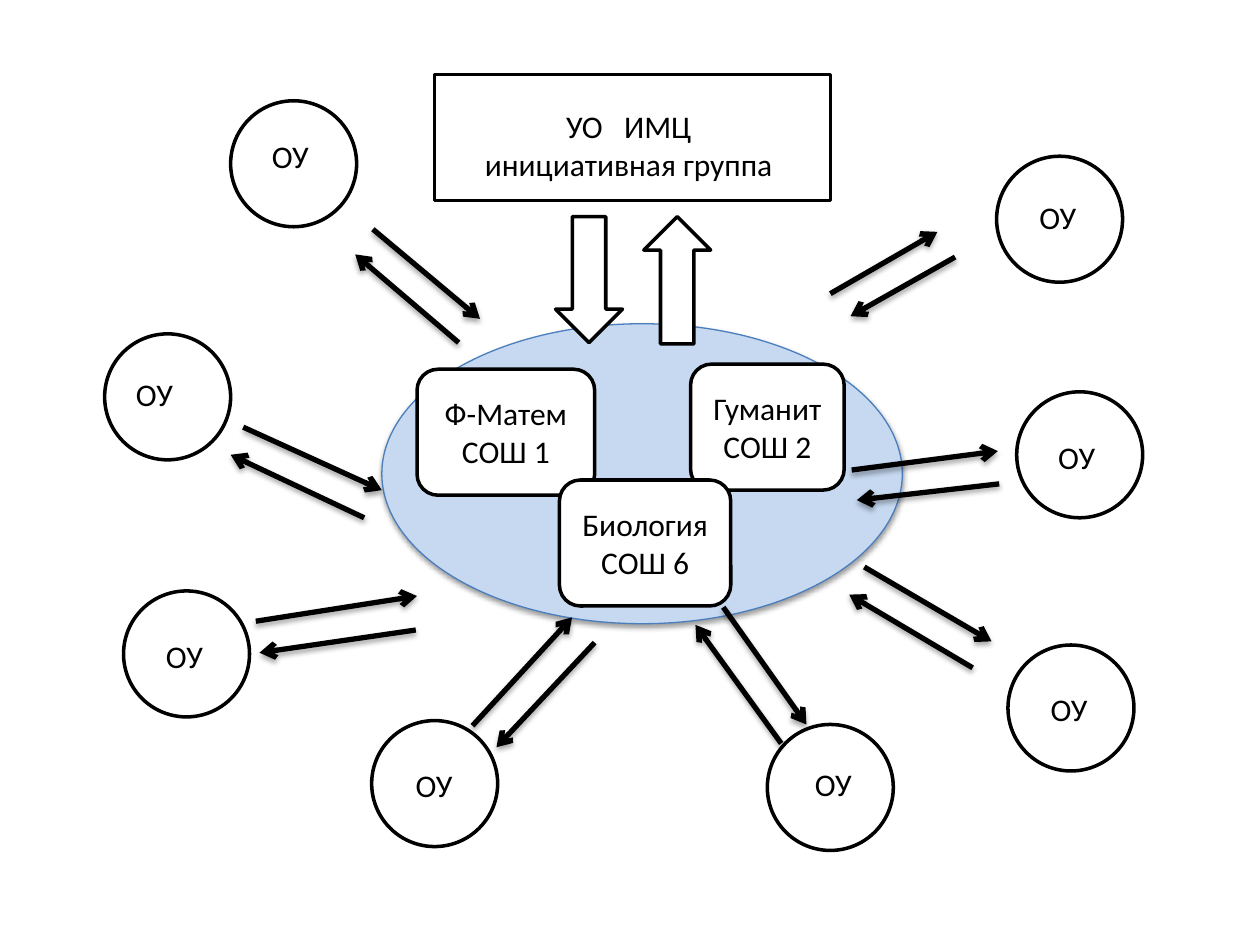
from dataclasses import dataclass

from lxml import etree
from pptx import Presentation
from pptx.dml.color import RGBColor
from pptx.enum.shapes import MSO_CONNECTOR, MSO_SHAPE
from pptx.enum.text import MSO_ANCHOR, MSO_AUTO_SIZE, PP_ALIGN
from pptx.oxml.ns import qn
from pptx.util import Pt

OVAL, RECT, ROUND = MSO_SHAPE.OVAL, MSO_SHAPE.RECTANGLE, MSO_SHAPE.ROUNDED_RECTANGLE
DOWN, UP = MSO_SHAPE.DOWN_ARROW, MSO_SHAPE.UP_ARROW
STRAIGHT = MSO_CONNECTOR.STRAIGHT
LEFT, CENTER = PP_ALIGN.LEFT, PP_ALIGN.CENTER
TOP, MIDDLE = MSO_ANCHOR.TOP, MSO_ANCHOR.MIDDLE
FIT_SHAPE = MSO_AUTO_SIZE.SHAPE_TO_FIT_TEXT
BLACK, WHITE, PALE_BLUE, BLUE = "000000", "FFFFFF", "C6D9F1", "4B7EBC"
FONT = "Calibri"
SIDE = 72


@dataclass
class School:
    x: float
    y: float
    label_x: float
    label_y: float
    label_w: float = 38.2


@dataclass
class Box:
    kind: int
    x: float
    y: float
    w: float
    h: float = SIDE
    text: str = ""


@dataclass
class Arrow:
    x1: float
    y1: float
    x2: float
    y2: float


SCHOOLS = [
    School(131.8, 57.6, 148.3, 74.9),
    School(576, 368.6, 593.3, 391),
    School(569.5, 89.3, 586.8, 109.4),
    School(438.5, 414, 458.6, 433.4),
    School(59.8, 190.8, 70.6, 211, 60.5),
    School(70.6, 337.7, 87.8, 360.7),
    School(212.4, 411.8, 230.4, 434.2),
    School(581, 223.9, 597.6, 247),
]
BOXES = [
    Box(RECT, 248.4, 42.5, 226.1),
    Box(ROUND, 238.3, 211, 101.5, text="Ф-Матем\nСОШ 1"),
    Box(ROUND, 394.6, 208.1, 87.8, text="Гуманит\nСОШ 2"),
    Box(ROUND, 319.7, 274.3, 97.9, text="Биология\nСОШ 6"),
    Box(DOWN, 317.5, 123.8, 38.2),
    Box(UP, 367.9, 123.8, 38.2, 72.7),
]
EXCHANGES = [
    (Arrow(139, 244.1, 218.2, 280.1), Arrow(208.1, 295.9, 131.8, 259.9)),
    (Arrow(213.1, 131, 274.3, 182.2), Arrow(262.1, 195.8, 203, 145.4)),
    (Arrow(474.5, 167.8, 535.7, 132.5), Arrow(545.8, 146.9, 486, 180.7)),
    (Arrow(486.7, 268.6, 570.2, 257.8), Arrow(571, 276.5, 489.6, 285.8)),
    (Arrow(146.2, 355, 238.3, 340.6), Arrow(237.6, 360, 148.3, 373)),
    (Arrow(493.9, 324, 566.6, 366.5), Arrow(555.8, 381.6, 485.3, 339.8)),
    (Arrow(270, 414.7, 326.9, 352.8), Arrow(339.8, 367.2, 283.7, 427)),
    (Arrow(446.4, 424.8, 397.4, 357.1), Arrow(413.3, 347, 460.8, 414)),
]


def color(value: str) -> RGBColor:
    return RGBColor.from_string(value)


def write(shape, text: str, *, align=CENTER, anchor=MIDDLE, size=18) -> None:
    tf = shape.text_frame
    tf.word_wrap = True
    tf.vertical_anchor = anchor
    for i, line in enumerate(text.split("\n")):
        p = tf.add_paragraph() if i else tf.paragraphs[0]
        p.alignment = align
        r = p.add_run()
        r.text = line
        r.font.name, r.font.size = FONT, Pt(size)
        r.font.color.rgb = color(BLACK)


def add_shadow(shape, alpha: int, dist: float) -> None:
    pr = shape._element.spPr
    effects = pr.find(qn("a:effectLst"))
    if effects is None:
        effects = etree.SubElement(pr, qn("a:effectLst"))
    shadow = etree.SubElement(effects, qn("a:outerShdw"), blurRad=str(Pt(3.1)),
                              dist=str(Pt(dist)), dir="5400000", rotWithShape="0")
    clr = etree.SubElement(shadow, qn("a:srgbClr"), val=BLACK)
    etree.SubElement(clr, qn("a:alpha"), val=str(alpha * 1000))


def add_box(s, box: Box, *, fill=WHITE, line=BLACK, width=2.0):
    sp = s.shapes.add_shape(box.kind, Pt(box.x), Pt(box.y), Pt(box.w), Pt(box.h))
    sp.shadow.inherit = False
    sp.fill.solid()
    sp.fill.fore_color.rgb = color(fill)
    sp.line.color.rgb = color(line)
    sp.line.width = Pt(width)
    if box.text:
        write(sp, box.text)
    return sp


def add_label(s, text: str, x: float, y: float, w: float, h: float, *, align=LEFT) -> None:
    sp = s.shapes.add_textbox(Pt(x), Pt(y), Pt(w), Pt(h))
    write(sp, text, align=align, anchor=TOP)
    sp.text_frame.auto_size = FIT_SHAPE


def add_exchange(s, arrows: tuple[Arrow, Arrow]) -> None:
    group = s.shapes.add_group_shape()
    for a in arrows:
        c = group.shapes.add_connector(STRAIGHT, Pt(a.x1), Pt(a.y1), Pt(a.x2), Pt(a.y2))
        c.line.color.rgb = color(BLACK)
        c.line.width = Pt(3)
        etree.SubElement(c.line._get_or_add_ln(), qn("a:tailEnd"), type="arrow")
        add_shadow(c, 35, 1.8)


def main() -> None:
    """Build the slide of schools exchanging with three subject centres."""
    prs = Presentation()
    prs.slide_width, prs.slide_height = Pt(720), Pt(540)
    s = prs.slides.add_slide(prs.slide_layouts[6])
    hub = add_box(s, Box(OVAL, 218.2, 185, 297.4, 171.4), fill=PALE_BLUE, line=BLUE, width=0.75)
    add_shadow(hub, 38, 1.6)
    for school in SCHOOLS:
        add_box(s, Box(OVAL, school.x, school.y, SIDE))
    for box in BOXES:
        add_box(s, box)
    for pair in EXCHANGES:
        add_exchange(s, pair)
    for school in SCHOOLS:
        add_label(s, "ОУ", school.label_x, school.label_y, school.label_w, 28.8)
    add_label(s, "УО   ИМЦ\nинициативная группа", 244.1, 57.6, 230.4, 51.1, align=CENTER)
    prs.save("out.pptx")


if __name__ == "__main__":
    main()
